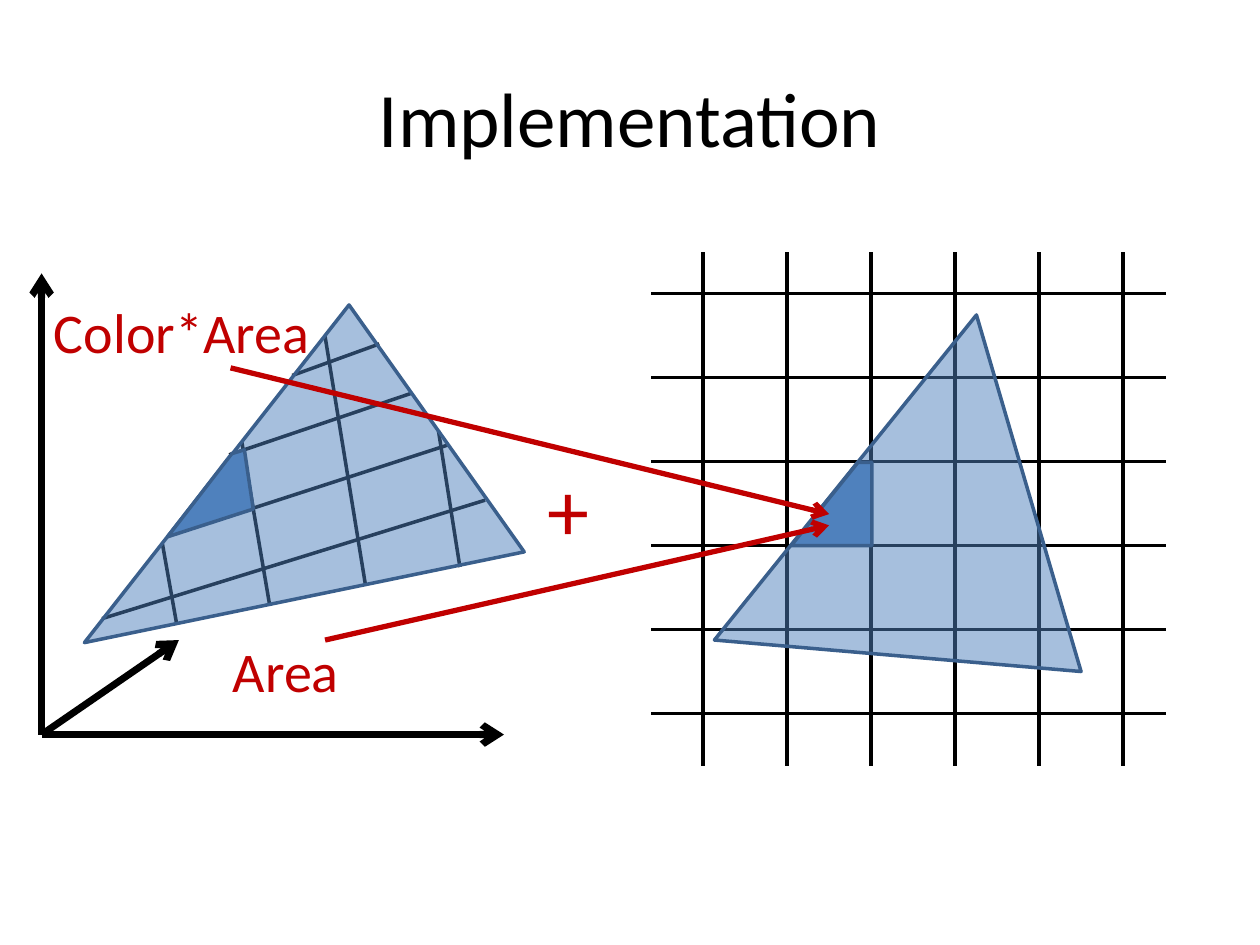
from pptx import Presentation
from pptx.dml.color import RGBColor
from pptx.enum.shapes import MSO_CONNECTOR
from pptx.enum.text import MSO_ANCHOR, MSO_AUTO_SIZE, PP_ALIGN
from pptx.oxml.ns import qn
from pptx.util import Inches, Pt
from lxml import etree

STRAIGHT = MSO_CONNECTOR.STRAIGHT
MIDDLE = MSO_ANCHOR.MIDDLE
FIT_SHAPE = MSO_AUTO_SIZE.SHAPE_TO_FIT_TEXT
LEFT, CENTER = PP_ALIGN.LEFT, PP_ALIGN.CENTER

BLACK = RGBColor(0x00, 0x00, 0x00)
BLUE = RGBColor(0x4F, 0x81, 0xBD)
DARK_BLUE = RGBColor(0x3A, 0x5F, 0x8C)
RED = RGBColor(0xC0, 0x00, 0x00)
FONT = "Calibri"


def write_text(frame, text, size, color, align=LEFT):
    """Put one formatted paragraph in a text frame."""
    para = frame.paragraphs[0]
    para.alignment = align
    span = para.add_run()
    span.text = text
    span.font.name = FONT
    span.font.size = Pt(size)
    span.font.color.rgb = color


def add_title(page, text, left, top, width, height):
    """Place and format the title placeholder."""
    title = page.shapes.title
    title.left, title.top = Inches(left), Inches(top)
    title.width, title.height = Inches(width), Inches(height)
    title.text_frame.vertical_anchor = MIDDLE
    write_text(title.text_frame, text, 44, BLACK, align=CENTER)


def add_label(page, text, left, top, width, height, size=32):
    """Add a red label."""
    box = page.shapes.add_textbox(Inches(left), Inches(top), Inches(width), Inches(height))
    box.text_frame.word_wrap = False
    box.text_frame.auto_size = FIT_SHAPE
    write_text(box.text_frame, text, size, RED)


def add_line(page, start, end, origin=(0, 0), color=BLACK, weight=2, arrow=False):
    """Draw a straight line between two points measured from an origin."""
    left, top = origin
    line = page.shapes.add_connector(
        STRAIGHT, Inches(left + start[0]), Inches(top + start[1]),
        Inches(left + end[0]), Inches(top + end[1]))
    line.line.color.rgb = color
    line.line.width = Pt(weight)
    if arrow:
        etree.SubElement(line.line._get_or_add_ln(), qn("a:tailEnd"), type="arrow")
    etree.SubElement(line._element.spPr, qn("a:effectLst"))


def add_polygon(page, points, origin, opacity=100):
    """Draw a closed blue outline from points measured from an origin."""
    left, top = origin
    corners = [(Inches(left + x), Inches(top + y)) for x, y in points]
    builder = page.shapes.build_freeform(*corners[0])
    builder.add_line_segments(corners[1:], close=True)
    shape = builder.convert_to_shape()
    shape.shadow.inherit = False
    shape.fill.solid()
    shape.fill.fore_color.rgb = BLUE
    if opacity < 100:
        fill_color = shape._element.spPr.find(qn("a:solidFill"))[0]
        etree.SubElement(fill_color, qn("a:alpha"), val=str(opacity * 1000))
    shape.line.color.rgb = DARK_BLUE
    shape.line.width = Pt(2)


def add_object_space(page, left, top, width, height):
    """Draw the axes and the triangle cut by the projected pixel grid."""
    origin = (left, top)
    grid_lines = [
        ((3.32, 2.33), (3.15, 1.25)), ((2.57, 2.47), (2.25, 0.5)),
        ((1.81, 2.63), (1.59, 1.34)), ((1.07, 2.77), (0.96, 2.15)),
        ((0.48, 2.74), (3.52, 1.8)), ((1.01, 2.08), (3.23, 1.36)),
        ((1.49, 1.44), (2.94, 0.95)), ((1.99, 0.81), (2.68, 0.56)),
    ]
    for start, end in grid_lines:
        add_line(page, start, end, origin)
    for tip in [(0, 0), (width, height), (1.09, 2.91)]:
        add_line(page, (0, height), tip, origin, weight=4, arrow=True)
    add_polygon(page, [(2.44, 0.25), (0.34, 2.93), (3.83, 2.21)], origin, opacity=50)
    add_polygon(page, [(1.61, 1.4), (1.51, 1.43), (1, 2.09), (1.68, 1.87)], origin)


def add_pixel_grid(page, left, top, size):
    """Draw the square pixel grid and the triangle lying on it."""
    origin = (left, top)
    pitch = 2 / 3
    for index in range(6):
        row = 0.33 + index * pitch
        add_line(page, (0, row), (size, row), origin)
    for index in range(6):
        column = 0.41 + index * pitch
        add_line(page, (column, 0), (column, size), origin)
    add_polygon(page, [(2.58, 0.5), (3.41, 3.33), (0.5, 3.08)], origin, opacity=50)
    add_polygon(page, [(1.11, 2.33), (1.75, 2.33), (1.75, 1.67), (1.64, 1.67)], origin)


def add_accumulation(page, left, top):
    """Add the labels and the arrows that lead to the shared pixel."""
    add_label(page, "Color*Area", left, top, 2.25, 0.64)
    add_label(page, "Area", left + 1.42, top + 2.69, 1.05, 0.64)
    add_label(page, "+", left + 3.92, top + 1.27, 0.54, 0.91, size=48)
    for start, end in [((1.5, 0.61), (6.25, 1.77)), ((2.25, 2.77), (6.25, 1.86))]:
        add_line(page, start, end, (left, top), color=RED, weight=3, arrow=True)


def main():
    """Build the slide and save it."""
    deck = Presentation()
    deck.slide_width, deck.slide_height = Inches(10), Inches(7.5)
    page = deck.slides.add_slide(deck.slide_layouts.get_by_name("Title Only"))
    add_title(page, "Implementation", 0.5, 0.3, 9, 1.25)
    add_object_space(page, 0.33, 2.17, 3.67, 3.66)
    add_pixel_grid(page, 5.17, 2, 4.08)
    add_accumulation(page, 0.33, 2.31)
    deck.save("out.pptx")


if __name__ == "__main__":
    main()
